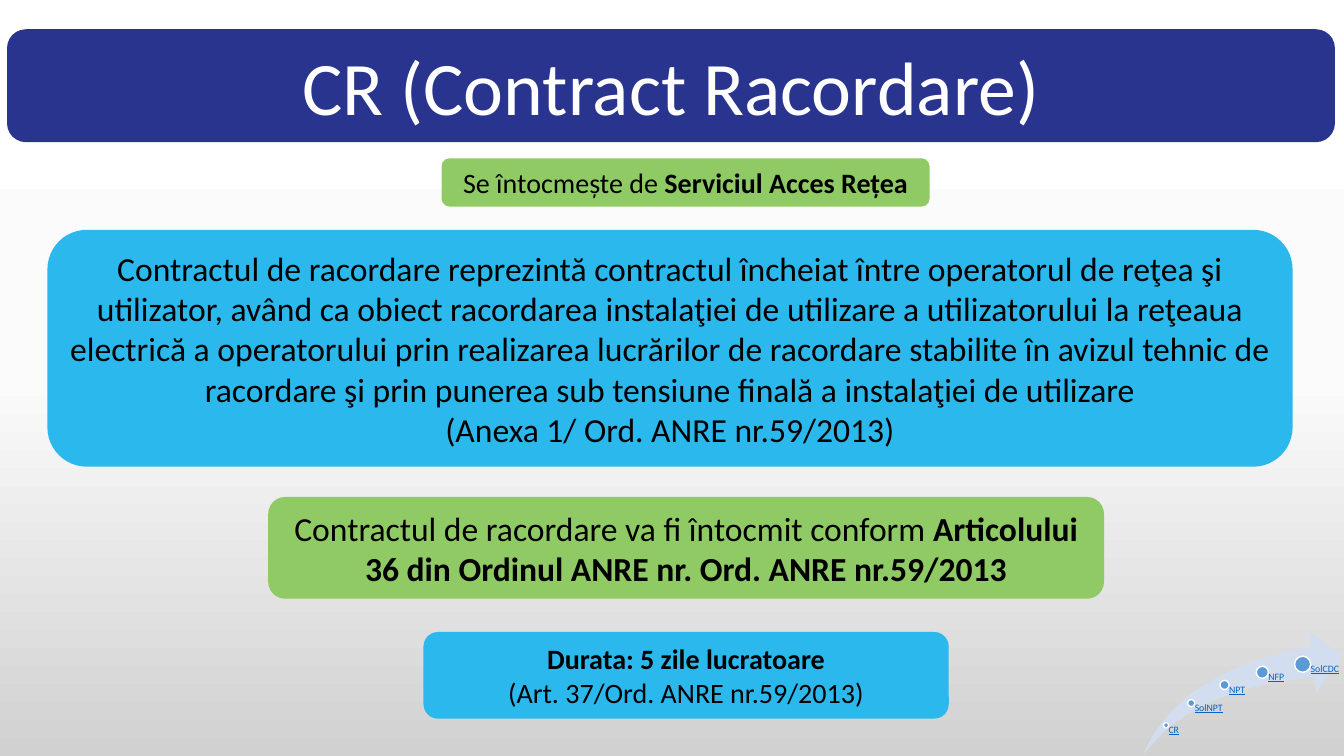
import copy

import pptx
import pptx.dml.color
import pptx.enum.shapes
import pptx.enum.text
import pptx.oxml.ns
import pptx.util

Inches = pptx.util.Inches
Pt = pptx.util.Pt
PRESET = pptx.enum.shapes.MSO_SHAPE
ALIGN = pptx.enum.text.PP_ALIGN
ANCHOR = pptx.enum.text.MSO_ANCHOR

BLUE, GREEN, NAVY = "2BB8ED", "90CA65", "29348F"
BACKDROP = [(0, "FFFFFF"), (0.5, "FBFBFB"), (1, "D1D1D1")]

PANELS = [
    ((0.47, 2.28, 12.35, 2.35), BLUE, 24, "000000", [
        [("Contractul de racordare reprezintă contractul încheiat între operatorul "
          "de reţea şi utilizator, având ca obiect racordarea instalaţiei de utilizare "
          "a utilizatorului la reţeaua electrică a operatorului prin realizarea "
          "lucrărilor de racordare stabilite în avizul tehnic de racordare şi prin "
          "punerea sub tensiune finală a instalaţiei de utilizare", False)],
        [("(Anexa 1/ Ord. ANRE nr.59/2013)", False)],
    ]),
    ((4.2, 6.27, 5.21, 0.86), BLUE, 20, "000000", [
        [("Durata: 5 zile lucratoare", True)],
        [("(Art. 37/Ord. ANRE nr.59/2013)", False)],
    ]),
    ((2.66, 4.93, 8.29, 1.01), GREEN, 24, "000000", [
        [("Contractul de racordare va fi întocmit conform ", False),
         ("Articolului 36 din Ordinul ANRE nr. Ord. ANRE nr.59/2013", True)],
    ]),
    ((0.07, 0.29, 13.17, 1.12), NAVY, 54, "FFFFFF", [
        [("CR (Contract Racordare)", False)],
    ]),
    ((4.38, 1.57, 4.84, 0.48), GREEN, 20, "000000", [
        [("Se întocmește de ", False), ("Serviciul Acces Rețea", True)],
    ]),
]

STEPS = [
    ("CR", 11.54, 7.17, 0.05, 0.26),
    ("SolNPT", 11.78, 6.94, 0.07, 0.35),
    ("NPT", 12.1, 6.75, 0.09, 0.38),
    ("NFP", 12.46, 6.61, 0.12, 0.39),
    ("SolCDC", 12.84, 6.51, 0.16, 0.39),
]
STEPS_BOTTOM = 7.49


def rgb(value):
    """Return the colour for a hex string."""
    return pptx.dml.color.RGBColor.from_string(value)


def apply_format(target, values):
    """Set each attribute in values on target."""
    for attribute, value in values.items():
        setattr(target, attribute, value)


def paint_background(slide):
    """Fill the slide with a vertical gradient."""
    fill = slide.background.fill
    fill.gradient()
    fill.gradient_angle = 270
    stop_list = slide.element.find(".//" + pptx.oxml.ns.qn("a:gsLst"))
    stop_list.append(copy.deepcopy(stop_list[-1]))
    for stop, (position, colour) in zip(fill.gradient_stops, BACKDROP):
        stop.position = position
        stop.color.rgb = rgb(colour)


def add_form(slide, preset, box, fill, outline=None):
    """Add a flat preset shape, with a 1 pt outline if a colour is given."""
    form = slide.shapes.add_shape(preset, *map(Inches, box))
    form.shadow.inherit = False
    form.fill.solid()
    form.fill.fore_color.rgb = rgb(fill)
    if outline:
        form.line.color.rgb = rgb(outline)
        form.line.width = Pt(1)
    else:
        form.line.fill.background()
    return form


def add_run(paragraph, text, size, colour, **extra):
    """Add a formatted run to a paragraph."""
    run = paragraph.add_run()
    run.text = text
    apply_format(run.font, {"name": "Calibri", "size": Pt(size), **extra})
    run.font.color.rgb = rgb(colour)


def add_panel(slide, box, fill, size, colour, paragraphs):
    """Add a rounded panel with centred text."""
    frame = add_form(slide, PRESET.ROUNDED_RECTANGLE, box, fill).text_frame
    apply_format(frame, {
        "word_wrap": True,
        "vertical_anchor": ANCHOR.MIDDLE,
        "auto_size": pptx.enum.text.MSO_AUTO_SIZE.SHAPE_TO_FIT_TEXT,
    })
    for index, runs in enumerate(paragraphs):
        paragraph = frame.add_paragraph() if index else frame.paragraphs[0]
        paragraph.alignment = ALIGN.CENTER
        for text, bold in runs:
            add_run(paragraph, text, size, colour, bold=bold)


def add_step(slide, label, left, top, diameter, width):
    """Add a dot with its label starting at the dot's centre."""
    add_form(slide, PRESET.OVAL, (left, top, diameter, diameter), "5B9BD5", "FFFFFF")
    radius = diameter / 2
    middle = top + radius
    box = (left + radius, middle, width, STEPS_BOTTOM - middle)
    frame = slide.shapes.add_textbox(*map(Inches, box)).text_frame
    apply_format(frame, {
        "word_wrap": True,
        "margin_left": Inches(radius),
        "margin_top": 0,
        "margin_right": 0,
        "margin_bottom": 0,
    })
    paragraph = frame.paragraphs[0]
    paragraph.line_spacing = 0.9
    add_run(paragraph, label, 7, "0563C1", underline=True)


def main():
    """Build the connection contract slide."""
    deck = pptx.Presentation()
    apply_format(deck, {"slide_width": Inches(13.33), "slide_height": Inches(7.5)})
    slide = deck.slides.add_slide(deck.slide_layouts[6])
    paint_background(slide)
    for panel in PANELS:
        add_panel(slide, *panel)
    swoosh = add_form(slide, PRESET.SWOOSH_ARROW, (11.34, 6.26, 1.97, 1.23), "D2DEEF")
    swoosh.adjustments[0] = 0.25
    swoosh.adjustments[1] = 0.25
    for step in STEPS:
        add_step(slide, *step)
    deck.save("out.pptx")


if __name__ == "__main__":
    main()
